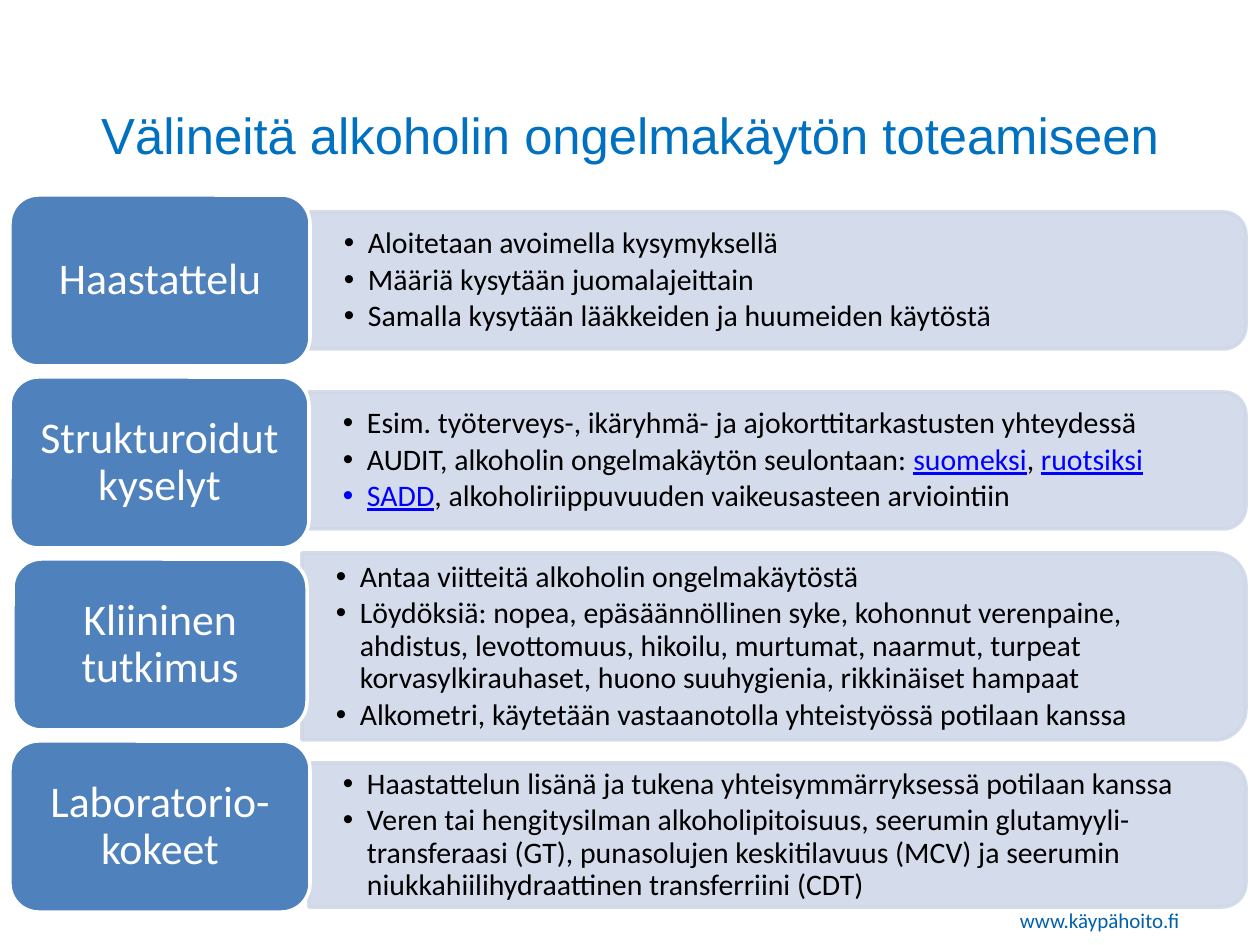
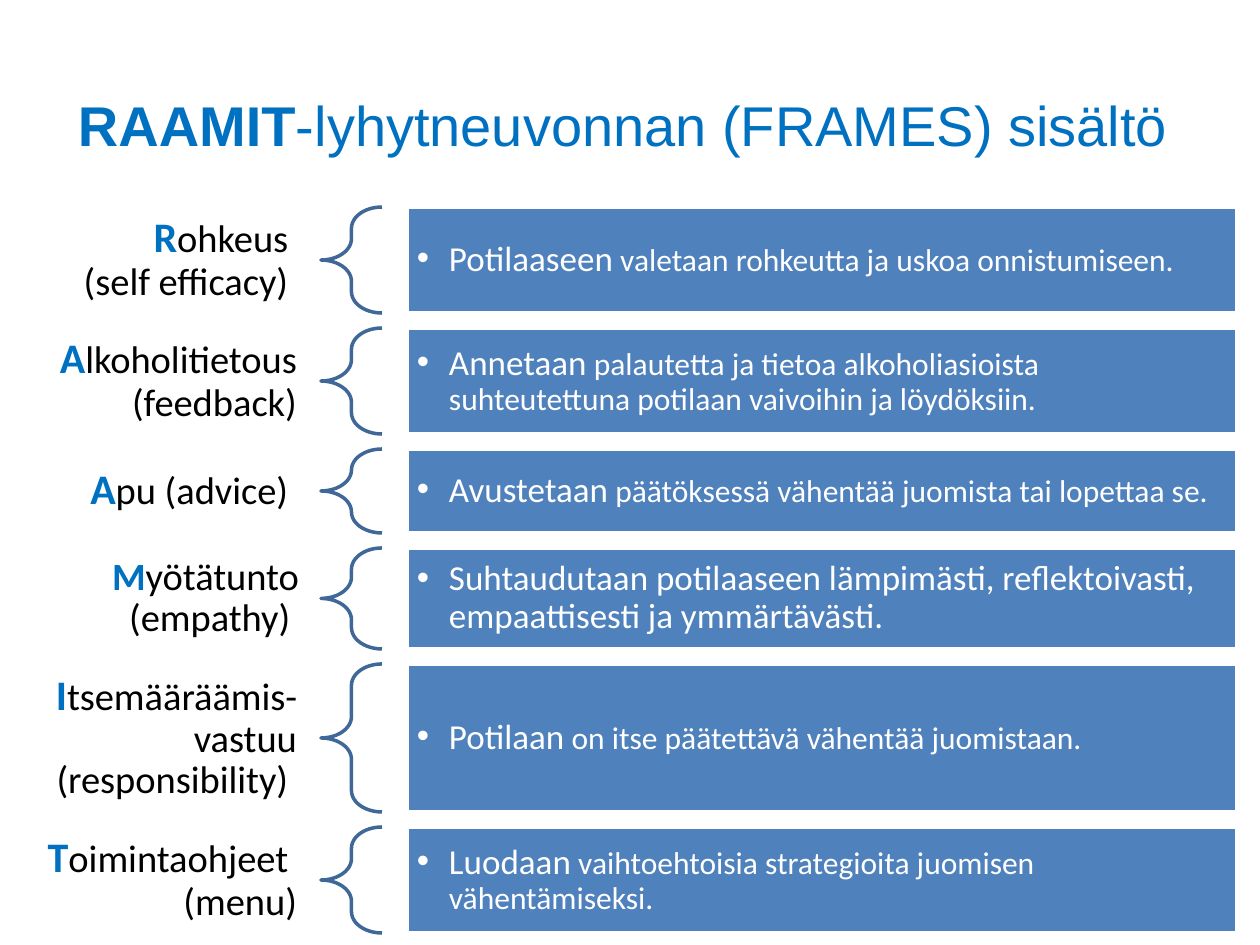
"""Build two slides on detecting problem drinking and on brief counselling."""
from dataclasses import dataclass

from lxml.etree import SubElement
from pptx import Presentation
from pptx.dml.color import RGBColor
from pptx.enum.shapes import MSO_SHAPE
from pptx.enum.text import MSO_ANCHOR, MSO_AUTO_SIZE, PP_ALIGN
from pptx.oxml.ns import qn
from pptx.util import Emu, Pt


@dataclass(frozen=True)
class Theme:
    head: str = "Arial"
    body: str = "Calibri"
    blue: str = "0070C0"
    foot: str = "0061AA"
    fill: str = "4F81BD"
    pale: str = "D0D8E8"
    edge: str = "3F6797"
    link: str = "0000FF"
    black: str = "000000"
    white: str = "FFFFFF"
    small: int = 12
    item: int = 17
    label: int = 25
    name: int = 22
    first: int = 20
    rest: int = 18


T = Theme()
LINK = dict(color=T.link, under=True)
FOOT = "www.käypähoito.fi"

TOOLS_HEAD = [("Välineitä alkoholin ongelmakäytön toteamiseen", {})]
TOOLS = [
    dict(name="Haastattelu", label=(10, 300), bar=(310, 212, 137), items=[
        [("Aloitetaan avoimella kysymyksellä", {})],
        [("Määriä kysytään juomalajeittain", {})],
        [("Samalla kysytään lääkkeiden ja huumeiden käytöstä", {})]]),
    dict(name="Strukturoidut kyselyt", label=(10, 299), bar=(309, 392, 137), items=[
        [("Esim. työterveys-, ikäryhmä- ja ajokorttitarkastusten yhteydessä", {})],
        [("AUDIT, alkoholin ongelmakäytön seulontaan: ", {}), ("suomeksi", LINK),
         (", ", {}), ("ruotsiksi", LINK)],
        [("SADD", LINK), (", alkoholiriippuvuuden vaikeusasteen arviointiin", {})]]),
    dict(name="Kliininen tutkimus", label=(13, 294), bar=(302, 553, 187), items=[
        [("Antaa viitteitä alkoholin ongelmakäytöstä", {})],
        [("Löydöksiä: nopea, epäsäännöllinen syke, kohonnut verenpaine, ahdistus, "
          "levottomuus, hikoilu, murtumat, naarmut, turpeat korvasylkirauhaset, "
          "huono suuhygienia, rikkinäiset hampaat", {})],
        [("Alkometri, käytetään vastaanotolla yhteistyössä potilaan kanssa", {})]]),
    dict(name="Laboratorio-\nkokeet", label=(10, 300), bar=(309, 763, 144), items=[
        [("Haastattelun lisänä ja tukena yhteisymmärryksessä potilaan kanssa", {})],
        [("Veren tai hengitysilman alkoholipitoisuus, seerumin glutamyyli-transferaasi "
          "(GT), punasolujen keskitilavuus (MCV) ja seerumin niukkahiilihydraattinen "
          "transferriini (CDT)", {})]]),
]

STEPS_HEAD = [("RAAMIT", dict(bold=True)), ("-lyhytneuvonnan (FRAMES) sisältö ", {})]
STEPS = [
    (106, 24, "R", "ohkeus \n(self efficacy) ",
     "Potilaaseen", " valetaan rohkeutta ja uskoa onnistumiseen."),
    (106, 24, "A", "lkoholitietous (feedback)",
     "Annetaan", " palautetta ja tietoa alkoholiasioista suhteutettuna potilaan "
     "vaivoihin ja löydöksiin."),
    (84, 24, "A", "pu (advice) ",
     "Avustetaan", " päätöksessä vähentää juomista tai lopettaa se."),
    (101, 22, "M", "yötätunto (empathy) ",
     "Suhtaudutaan potilaaseen lämpimästi, reflektoivasti, empaattisesti ja "
     "ymmärtävästi.", ""),
    (148, 24, "I", "tsemääräämis-vastuu (responsibility) ",
     "Potilaan", " on itse päätettävä vähentää juomistaan."),
    (106, 24, "T", "oimintaohjeet \n(menu)",
     "Luodaan", " vaihtoehtoisia strategioita juomisen vähentämiseksi."),
]


def px(n):
    return Emu(round(n * 914400 / 126))


def rgb(code):
    return RGBColor.from_string(code)


def write(shape, paras, size, color=T.black, font=T.body, align=PP_ALIGN.LEFT,
          pad=(13, 6, 13, 6), anchor=MSO_ANCHOR.MIDDLE, line=0.9, after=0, hang=0):
    frame = shape.text_frame
    frame.word_wrap = True
    frame.auto_size = MSO_AUTO_SIZE.NONE
    frame.vertical_anchor = anchor
    (frame.margin_left, frame.margin_top,
     frame.margin_right, frame.margin_bottom) = map(px, pad)
    for i, runs in enumerate(paras):
        para = frame.add_paragraph() if i else frame.paragraphs[0]
        para.alignment = align
        para.line_spacing = line
        para.space_after = Pt(after)
        if hang:
            props = para._p.get_or_add_pPr()
            props.set("marL", str(px(hang)))
            props.set("indent", str(-px(hang)))
            SubElement(props, qn("a:buFont")).set("typeface", "Arial")
            SubElement(props, qn("a:buChar")).set("char", "•")
        for words, form in runs:
            for k, part in enumerate(words.split("\n")):
                if k:
                    para.add_line_break()
                run = para.add_run()
                run.text = part
                run.font.name = font
                run.font.size = Pt(form.get("size", size))
                run.font.bold = form.get("bold", False)
                run.font.underline = form.get("under", False)
                run.font.color.rgb = rgb(form.get("color", color))
    return shape


def text(slide, box, paras, size, **form):
    return write(slide.shapes.add_textbox(*map(px, box)), paras, size, **form)


def draw(slide, kind, box, fill=None, line=T.white):
    shape = slide.shapes.add_shape(kind, *map(px, box))
    shape.shadow.inherit = False
    if fill:
        shape.fill.solid()
        shape.fill.fore_color.rgb = rgb(fill)
    else:
        shape.fill.background()
    shape.line.color.rgb = rgb(line)
    shape.line.width = Pt(2)
    return shape


def start(deck, head, size, high):
    slide = deck.slides.add_slide(deck.slide_layouts[5])
    text(slide, (1007, 902, 238, 38), [[(FOOT, {})]], T.small, color=T.foot,
         anchor=MSO_ANCHOR.TOP, line=1)
    title = slide.shapes.title
    title.left, title.top, title.width, title.height = map(px, (64, 55, 1134, high))
    write(title, [head], size, color=T.blue, font=T.head, align=PP_ALIGN.CENTER, line=1)
    return slide


def bar(slide, left, top, wide, high):
    """Draw a pale bar whose right-hand corners are round."""
    box = (left + (wide - high) / 2, top + (high - wide) / 2, high, wide)
    shape = draw(slide, MSO_SHAPE.ROUND_2_SAME_RECTANGLE, box, T.pale, T.pale)
    shape.rotation = 90
    for color in shape._element.spPr.iter(qn("a:srgbClr")):
        SubElement(color, qn("a:alpha")).set("val", "90000")


def tools(deck):
    slide = start(deck, TOOLS_HEAD, 29, 158)
    for i, tool in enumerate(TOOLS):
        left, top, high = tool["bar"]
        box = (left, top, 1246 - left, high)
        bar(slide, *box)
        text(slide, box, tool["items"], T.item, pad=(34, 12, 42, 12), after=2.7, hang=24)
        x, wide = tool["label"]
        label = draw(slide, MSO_SHAPE.ROUNDED_RECTANGLE, (x, 195 + 182 * i, wide, 171), T.fill)
        write(label, [[(tool["name"], {})]], T.label, color=T.white, align=PP_ALIGN.CENTER)


def steps(deck):
    slide = start(deck, STEPS_HEAD, 32, 139)
    top, gap = 207, 15
    for high, big, lead, name, first, rest in STEPS:
        runs = [(lead, dict(size=big, bold=True, color=T.blue)), (name, {})]
        text(slide, (16, top, 305, high), [runs], T.name, align=PP_ALIGN.RIGHT,
             pad=(big, 9, big, 9))
        brace = draw(slide, MSO_SHAPE.LEFT_BRACE, (321, top, 61, high), line=T.edge)
        brace.adjustments[0] = 0.35
        panel = draw(slide, MSO_SHAPE.RECTANGLE, (407, top, 830, high), T.fill)
        runs = [(first, dict(size=T.first))] + ([(rest, {})] if rest else [])
        write(panel, [runs], T.rest, color=T.white, pad=(10, 10, 10, 10), hang=32)
        top += high + gap


def main():
    deck = Presentation()
    deck.slide_width, deck.slide_height = px(1260), px(945)
    tools(deck)
    steps(deck)
    deck.save("out.pptx")


if __name__ == "__main__":
    main()
